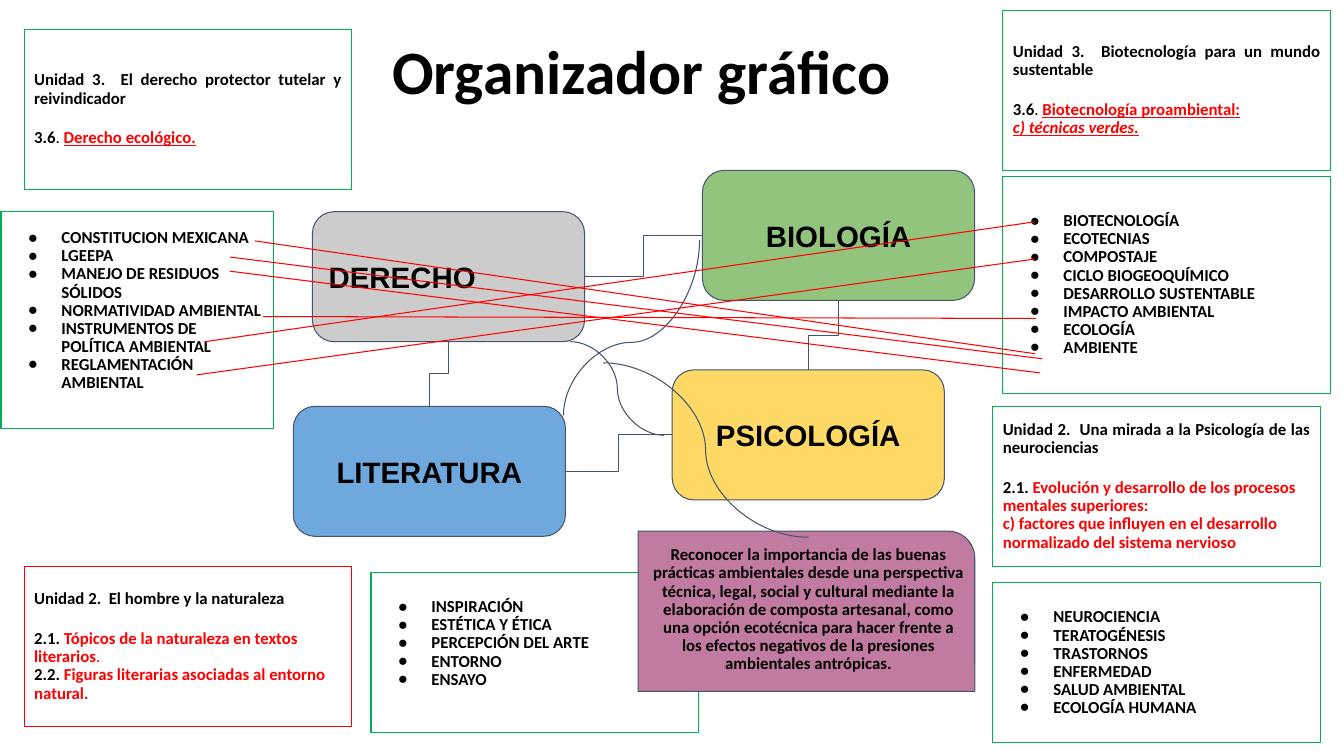
from lxml import etree
from pptx import Presentation
from pptx.dml.color import RGBColor
from pptx.enum import shapes, text
from pptx.oxml import ns
from pptx.util import Pt

BLACK = RGBColor(0x00, 0x00, 0x00)
RED = RGBColor(0xFF, 0x00, 0x00)
GREEN = RGBColor(0x00, 0xB0, 0x50)
SLATE = RGBColor(0x44, 0x54, 0x6A)
GRAY = RGBColor(0xCC, 0xCC, 0xCC)
LEAF = RGBColor(0x93, 0xC4, 0x7D)
YELLOW = RGBColor(0xFF, 0xD9, 0x66)
BLUE = RGBColor(0x6F, 0xA8, 0xDC)
MAUVE = RGBColor(0xC2, 0x7B, 0xA0)

SUBJECT_SIZE = (194.4, 92.9)
NOTE_SIZE = (234, 114.5)

SUBJECTS = {
    "DERECHO": (223.2, 151.2, GRAY, text.PP_ALIGN.LEFT),
    "BIOLOGÍA": (501.8, 121.7, LEAF, text.PP_ALIGN.CENTER),
    "PSICOLOGÍA": (480.2, 264.2, YELLOW, text.PP_ALIGN.CENTER),
    "LITERATURA": (209.5, 290.2, BLUE, text.PP_ALIGN.CENTER),
}

JOINS = [
    ("BIOLOGÍA", 1, "DERECHO", 3),
    ("DERECHO", 2, "LITERATURA", 0),
    ("BIOLOGÍA", 2, "PSICOLOGÍA", 0),
    ("PSICOLOGÍA", 1, "LITERATURA", 3),
]

NOTES = [
    (716.4, 7.2, GREEN, "Unidad 3.  Biotecnología para un mundo sustentable",
     [[("3.6", "b"), (". ", ""), ("Biotecnología proambiental:", "bru")],
      [("c) técnicas verdes.", "brui")]]),
    (709.2, 290.2, GREEN, "Unidad 2.  Una mirada a la Psicología de las neurociencias",
     [[("2.1. ", "b"),
       ("Evolución y desarrollo de los procesos mentales superiores:", "br")],
      [("c) factores que influyen en el desarrollo normalizado del sistema nervioso", "br")]]),
    (17.3, 20.9, GREEN, "Unidad 3.  El derecho protector tutelar y reivindicador",
     [[("3.6", "b"), (". ", ""), ("Derecho ecológico.", "bru")]]),
    (17.3, 404.6, RED, "Unidad 2.  El hombre y la naturaleza",
     [[("2.1. ", "b"), ("Tópicos de la naturaleza en textos literarios", "br"), (".", "r")],
      [("2.2. ", "b"), ("Figuras literarias asociadas al entorno natural.", "br")]]),
]

LISTS = [
    ((716.4, 126, 234, 154.8), 3.6,
     ["BIOTECNOLOGÍA", "ECOTECNIAS", "COMPOSTAJE", "CICLO BIOGEOQUÍMICO",
      "DESARROLLO SUSTENTABLE", "IMPACTO AMBIENTAL", "ECOLOGÍA", "AMBIENTE"]),
    ((709.2, 416.2, *NOTE_SIZE), 3.6,
     ["NEUROCIENCIA", "TERATOGÉNESIS", "TRASTORNOS", "ENFERMEDAD",
      "SALUD AMBIENTAL", "ECOLOGÍA HUMANA"]),
    ((265, 409, *NOTE_SIZE), 16.8,
     ["INSPIRACIÓN", "ESTÉTICA Y ÉTICA", "PERCEPCIÓN DEL ARTE", "ENTORNO", "ENSAYO"]),
    ((0.7, 151.2, 194.4, 154.8), 16.8,
     ["CONSTITUCION MEXICANA", "LGEEPA", "MANEJO DE RESIDUOS SÓLIDOS",
      "NORMATIVIDAD AMBIENTAL", "INSTRUMENTOS DE POLÍTICA AMBIENTAL",
      "REGLAMENTACIÓN AMBIENTAL"]),
]

RELATIONS = [
    (182.2, 172.1, 739.4, 252.7), (164.2, 193.7, 743, 266.4),
    (164.2, 183.6, 744.5, 256.3), (187.9, 226.1, 740.2, 227.5),
    (146.2, 244.1, 739.4, 158.4), (140.4, 267.8, 739.4, 185),
]

PURPOSE = (
    "Reconocer la importancia de las buenas prácticas ambientales desde una "
    "perspectiva técnica, legal, social y cultural mediante la elaboración de "
    "composta artesanal, como una opción ecotécnica para hacer frente a los "
    "efectos negativos de la presiones ambientales antrópicas."
)


def place(box, left, top, width, height):
    """Move and size a shape, in points."""
    box.left, box.top, box.width, box.height = map(Pt, (left, top, width, height))


def frame_text(box, across=7.2, above=3.6, below=3.6, anchor=text.MSO_ANCHOR.MIDDLE):
    """Set wrapping, insets and anchor, and return the text frame."""
    frame = box.text_frame
    frame.word_wrap = True
    frame.auto_size = text.MSO_AUTO_SIZE.NONE
    frame.margin_left = frame.margin_right = Pt(across)
    frame.margin_top, frame.margin_bottom = Pt(above), Pt(below)
    frame.vertical_anchor = anchor
    return frame


def format_para(para, align=text.PP_ALIGN.LEFT, size=12, font="Calibri", spacing=0.9):
    """Format a paragraph and all its runs in bold black."""
    para.alignment, para.line_spacing = align, spacing
    para.space_before = para.space_after = Pt(0)
    for span in para.runs:
        span.font.name, span.font.size, span.font.bold = font, Pt(size), True
        span.font.color.rgb = BLACK


def outline(box, color):
    """Draw a thin line of the given colour."""
    box.line.color.rgb, box.line.width = color, Pt(0.75)


def add_box(page, kind, area, line, fill=None):
    """Add an outlined preset shape without shadow."""
    box = page.shapes.add_shape(kind, *map(Pt, area))
    box.shadow.inherit = False
    outline(box, line)
    if fill is None:
        box.fill.background()
    else:
        box.fill.solid()
        box.fill.fore_color.rgb = fill
    return box


def add_title(page):
    """Fill the title placeholder."""
    title = page.shapes.title
    place(title, 272.9, 1.4, 414, 104.4)
    frame = frame_text(title)
    frame.text = "Organizador gráfico"
    format_para(frame.paragraphs[0], size=44)


def add_subject(page, name):
    """Add one rounded subject box."""
    left, top, fill, align = SUBJECTS[name]
    box = add_box(page, shapes.MSO_SHAPE.ROUNDED_RECTANGLE,
                  (left, top, *SUBJECT_SIZE), SLATE, fill)
    frame = frame_text(box, above=7.2, below=7.2)
    frame.text = name
    format_para(frame.paragraphs[0], align, 21, "Arial", 1)
    return box


def add_note(page, left, top, color, heading, lines):
    """Add a unit box with its heading and topics."""
    box = add_box(page, shapes.MSO_SHAPE.RECTANGLE, (left, top, *NOTE_SIZE), color)
    frame = frame_text(box)
    frame.text = heading
    format_para(frame.paragraphs[0], text.PP_ALIGN.JUSTIFY)
    frame.paragraphs[0].space_after = Pt(15.4)
    for line in lines:
        para = frame.add_paragraph()
        for words, _ in line:
            para.add_run().text = words
        format_para(para)
        for span, (_, style) in zip(para.runs, line):
            span.font.bold = "b" in style
            span.font.underline = "u" in style
            span.font.italic = "i" in style
            span.font.color.rgb = RED if "r" in style else BLACK


def add_list(box, area, below, items):
    """Fill a body placeholder with a bulleted list."""
    place(box, *area)
    outline(box, GREEN)
    frame = frame_text(box, below=below)
    frame.text = "\n".join(items)
    for para in frame.paragraphs:
        format_para(para)
        props = para._p.get_or_add_pPr()
        props.set("marL", str(Pt(36)))
        props.set("indent", str(Pt(-24)))
        etree.SubElement(props, ns.qn("a:buFont"), typeface="Arial")
        etree.SubElement(props, ns.qn("a:buChar"), char="●")


def add_purpose(page, left, top):
    """Add the purpose panel and its text."""
    add_box(page, shapes.MSO_SHAPE.ROUND_1_RECTANGLE,
            (left, top, 240.5, 114.5), SLATE, MAUVE)
    box = page.shapes.add_textbox(*map(Pt, (left + 3.6, top + 3.6, 236.2, 105.8)))
    frame = frame_text(box, above=7.2, below=7.2, anchor=text.MSO_ANCHOR.TOP)
    frame.text = PURPOSE
    format_para(frame.paragraphs[0], text.PP_ALIGN.CENTER)


def add_link(page, kind, ends, color=SLATE):
    """Add a thin connector without shadow."""
    link = page.shapes.add_connector(kind, *map(Pt, ends))
    outline(link, color)
    etree.SubElement(link._element.spPr, ns.qn("a:effectLst"))
    return link


def turn_downward(link):
    """Make a link that runs down and left leave its start vertically."""
    left, top, width, height = link.left, link.top, link.width, link.height
    xfrm = link._element.spPr.find(ns.qn("a:xfrm"))
    xfrm.attrib.clear()
    xfrm.set("rot", "5400000")
    link.left, link.top = left + (width - height) // 2, top + (height - width) // 2
    link.width, link.height = height, width


def add_links(page, boxes):
    """Join the subjects with elbows and curves."""
    for start, start_side, end, end_side in JOINS:
        link = add_link(page, shapes.MSO_CONNECTOR.ELBOW, (0, 0, 0, 0))
        link.begin_connect(boxes[start], start_side)
        link.end_connect(boxes[end], end_side)
        if start_side == 2:
            turn_downward(link)
    curve = add_link(page, shapes.MSO_CONNECTOR.CURVE, (499.7, 171.4, 402.5, 296.6))
    turn_downward(curve)
    guides = curve._element.spPr.find(ns.qn("a:prstGeom")).get_or_add_avLst()
    etree.SubElement(guides, ns.qn("a:gd"), name="adj1", fmla="val 58400")
    add_link(page, shapes.MSO_CONNECTOR.CURVE, (474.5, 311, 407.5, 244.1))


def build_organizer(deck):
    """Build the graphic organizer slide."""
    page = deck.slides.add_slide(deck.slide_layouts[4])
    add_title(page)
    bodies = [box for box in page.placeholders if box.placeholder_format.idx in (1, 2, 3, 4)]
    for box, entry in zip(bodies, LISTS):
        add_list(box, *entry)
    boxes = {name: add_subject(page, name) for name in SUBJECTS}
    add_links(page, boxes)
    for note in NOTES:
        add_note(page, *note)
    add_purpose(page, 455.8, 379.4)
    add_link(page, shapes.MSO_CONNECTOR.CURVE, (577.4, 383.8, 430.6, 259.2))
    for ends in RELATIONS:
        add_link(page, shapes.MSO_CONNECTOR.STRAIGHT, ends, RED)


def main():
    """Create the deck and save it."""
    deck = Presentation()
    deck.slide_width, deck.slide_height = Pt(960), Pt(540)
    build_organizer(deck)
    deck.save("out.pptx")


if __name__ == "__main__":
    main()
